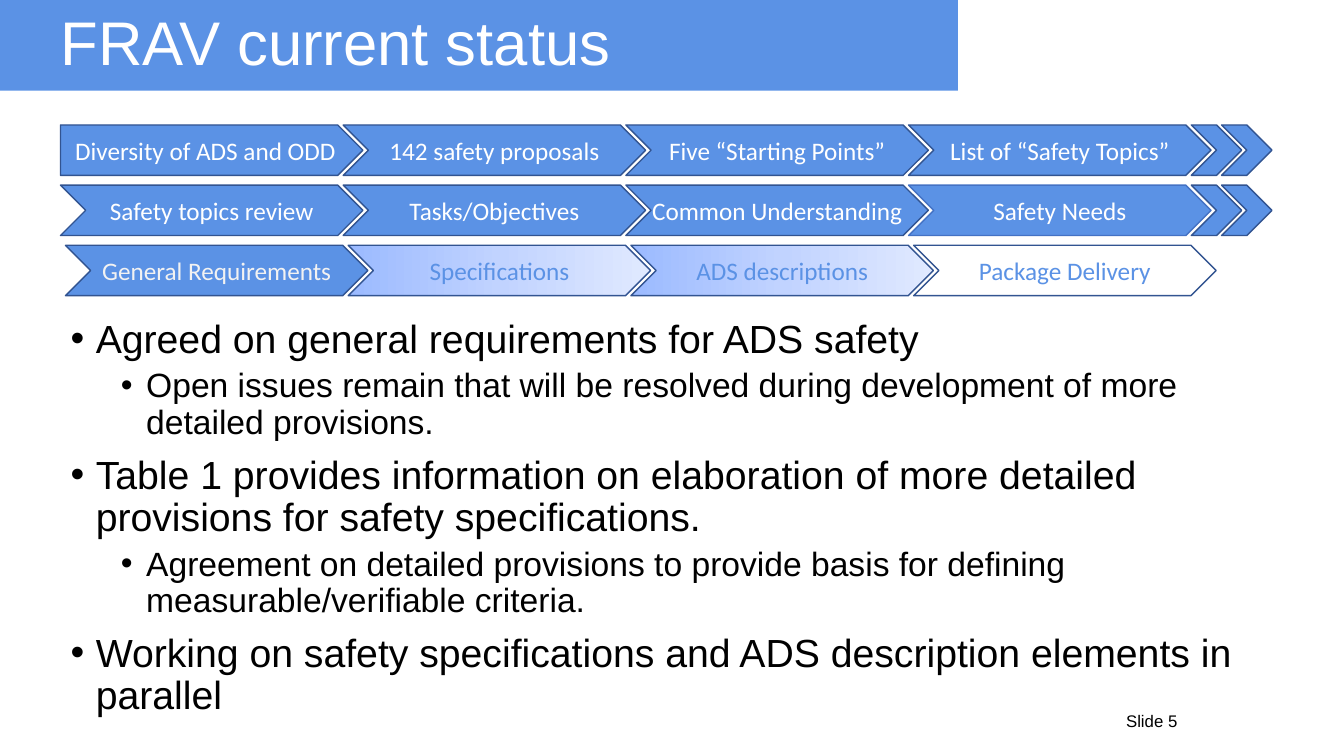
from copy import deepcopy

from pptx import Presentation
from pptx.dml.color import RGBColor
from pptx.enum.shapes import MSO_SHAPE as Shape
from pptx.enum.text import MSO_ANCHOR as Anchor, MSO_AUTO_SIZE as Fit, PP_ALIGN as Align
from pptx.oxml import parse_xml
from pptx.oxml.ns import nsdecls, qn
from pptx.util import Inches, Pt

BLUE = RGBColor(0x5B, 0x92, 0xE5)
NAVY = RGBColor(0x32, 0x54, 0x91)
ROYAL = RGBColor(0x44, 0x72, 0xC4)
WHITE = RGBColor(0xFF, 0xFF, 0xFF)
PALE = RGBColor(0xF2, 0xF2, 0xF2)
BLACK = RGBColor(0, 0, 0)
FADE = [RGBColor(0x9B, 0xBA, 0xFF), RGBColor(0xC1, 0xD3, 0xFF), RGBColor(0xE0, 0xE9, 0xFF)]

# Grid of the process steps, in inches
LEFT, TOP = 0.6, 1.24
COL, ROW = 2.804, 0.597
STEP, TAIL, HIGH = 3, 0.5, 0.5
TAIL_GAP = 0.3
SHIFT = 0.05

DONE = [
    ["Diversity of ADS and ODD", "142 safety proposals",
     "Five “Starting Points”", "List of “Safety Topics”"],
    ["Safety topics review", "Tasks/Objectives",
     "Common Understanding", "Safety Needs"],
]
NEXT = [
    ("General Requirements", BLUE, PALE),
    ("Specifications", FADE, BLUE),
    ("ADS descriptions", FADE, BLUE),
    ("Package Delivery", WHITE, BLUE),
]
POINTS = [
    (0, "Agreed on general requirements for ADS safety"),
    (1, "Open issues remain that will be resolved during development "
        "of more detailed provisions."),
    (0, "Table 1 provides information on elaboration of more detailed "
        "provisions for safety specifications."),
    (1, "Agreement on detailed provisions to provide basis for defining "
        "measurable/verifiable criteria."),
    (0, "Working on safety specifications and ADS description elements in parallel"),
]
# Per list level: indent in inches, text size, space before
LEVELS = [(0.25, 28, 10), (0.75, 24, 5)]


def box(left, top, width, height):
    return [Inches(x) for x in (left, top, width, height)]


def place(holder, *frame):
    holder.left, holder.top, holder.width, holder.height = box(*frame)


def write(para, text, size, color, face="Arial"):
    run = para.add_run()
    run.text = text
    run.font.size = Pt(size)
    run.font.name = face
    run.font.color.rgb = color


def paint(shape, fill):
    """Fill with one colour, or with a list of three as a gradient."""
    if isinstance(fill, RGBColor):
        shape.fill.solid()
        shape.fill.fore_color.rgb = fill
        return
    shape.fill.gradient()
    shape.fill.gradient_angle = 0
    stops = shape.element.find(".//" + qn("a:gsLst"))
    stops.insert(1, deepcopy(stops[0]))
    for i, (stop, color) in enumerate(zip(shape.fill.gradient_stops, fill)):
        stop.position = i / 2
        stop.color.rgb = color


def add_step(shapes, kind, left, row, width, fill=BLUE, line=NAVY):
    step = shapes.add_shape(kind, *box(left, TOP + row * ROW, width, HIGH))
    step.shadow.inherit = False
    paint(step, fill)
    step.line.color.rgb = line
    step.line.width = Pt(1)
    return step


def label(step, text, color):
    frame = step.text_frame
    frame.word_wrap = True
    frame.vertical_anchor = Anchor.MIDDLE
    frame.margin_left = frame.margin_right = 0
    para = frame.paragraphs[0]
    para.alignment = Align.CENTER
    write(para, text, 18, color, "Calibri")


def add_steps(slide):
    for row, names in enumerate(DONE):
        group = slide.shapes.add_group_shape().shapes
        for col, name in enumerate(names):
            kind = Shape.PENTAGON if row == col == 0 else Shape.CHEVRON
            line = ROYAL if name == "Safety Needs" else NAVY
            step = add_step(group, kind, LEFT + col * COL, row, STEP, line=line)
            label(step, name, WHITE)
        for i in range(2):
            add_step(group, Shape.CHEVRON, LEFT + 4 * COL + i * TAIL_GAP, row, TAIL)
    for col, (name, fill, color) in enumerate(NEXT):
        left = LEFT + SHIFT + col * COL
        step = add_step(slide.shapes, Shape.CHEVRON, left, len(DONE), STEP, fill)
        label(step, name, color)


def add_title(slide):
    title = slide.shapes.title
    place(title, 0.5, 0.05, 8.8, 0.8)
    title.text_frame.vertical_anchor = Anchor.MIDDLE
    title.text_frame.auto_size = Fit.NONE
    para = title.text_frame.paragraphs[0]
    para.alignment = Align.LEFT
    para.line_spacing = 0.9
    write(para, "FRAV current status", 44, WHITE)

    band = slide.shapes.add_shape(Shape.RECTANGLE, *box(0, 0, 9.5, 0.9))
    band.shadow.inherit = False
    paint(band, BLUE)
    band.line.fill.background()
    title.element.addprevious(band.element)


def add_points(slide):
    body = slide.placeholders[1]
    place(body, 0.6, 3.12, 12.24, 4.14)
    frame = body.text_frame
    frame.auto_size = Fit.NONE
    for i, (level, text) in enumerate(POINTS):
        para = frame.add_paragraph() if i else frame.paragraphs[0]
        indent, size, gap = LEVELS[level]
        para.level = level
        para.line_spacing = 0.9
        para.space_before = Pt(gap if i else 0)
        props = para._p.get_or_add_pPr()
        props.set("marL", str(Inches(indent)))
        props.set("indent", str(Inches(-0.25)))
        for mark in ('a:buFont %s typeface="Arial"', 'a:buChar %s char="•"'):
            props.append(parse_xml("<" + mark % nsdecls("a") + "/>"))
        write(para, text, size, BLACK)


def add_number(slide):
    note = slide.shapes.add_textbox(*box(11.07, 7, 0.82, 0.3))
    note.text_frame.word_wrap = False
    write(note.text_frame.paragraphs[0], "Slide 5", 12, BLACK)


def main():
    deck = Presentation()
    deck.slide_width, deck.slide_height = Inches(13.33), Inches(7.5)
    slide = deck.slides.add_slide(deck.slide_layouts[1])
    add_title(slide)
    add_points(slide)
    add_steps(slide)
    add_number(slide)
    deck.save("out.pptx")


if __name__ == "__main__":
    main()
